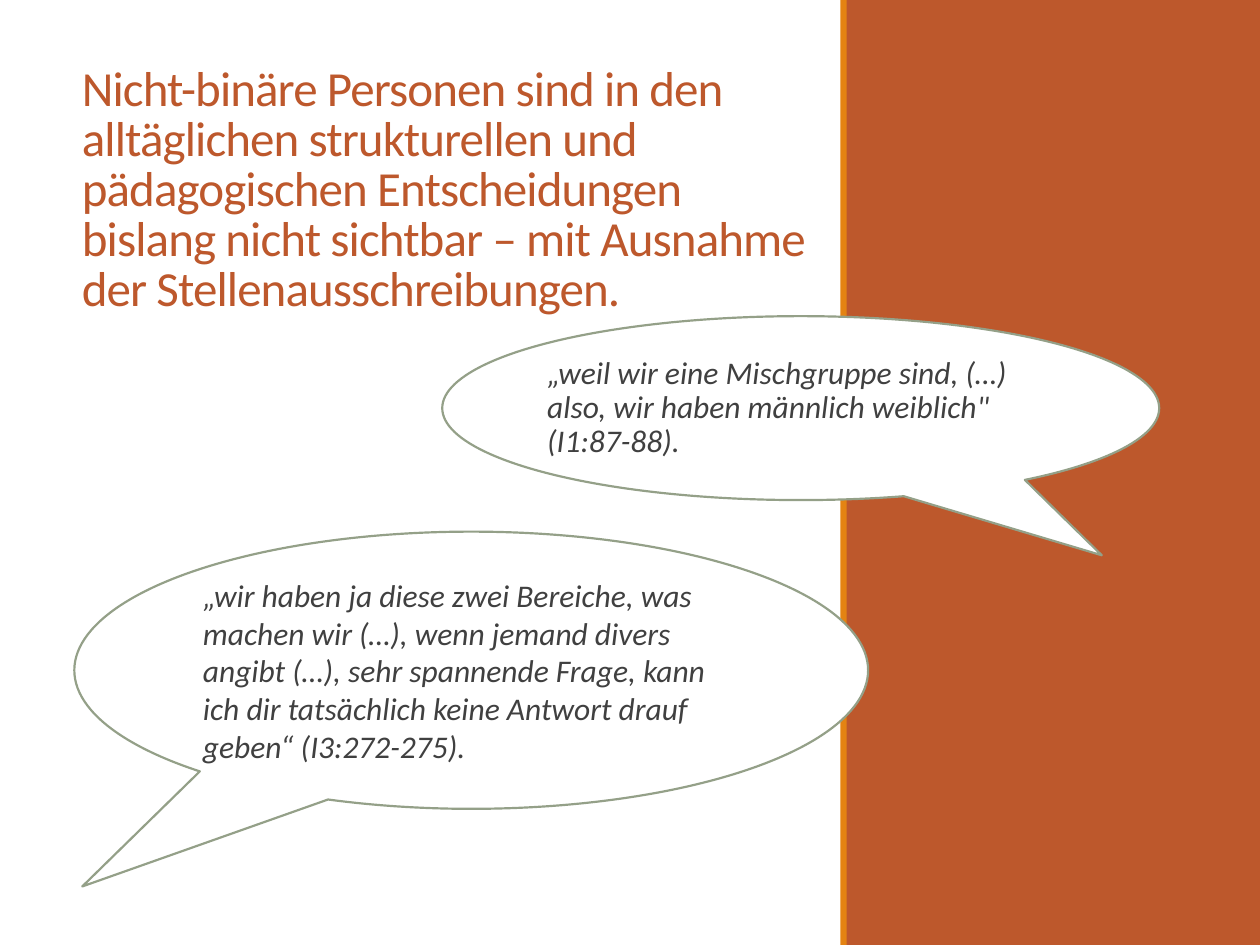
from pptx import Presentation, util as u
from pptx.dml.color import RGBColor
from pptx.enum import shapes, text

COLORS = {
    "rust": "BD582C",
    "orange": "E48312",
    "sage": "94A088",
    "ink": "404040",
    "white": "FFFFFF",
}
COLUMNS, ROWS = 100, 75


def write(frame, words, *, size, color, font="Calibri", italic=False, tracking=0,
          line_spacing=1.0, space_after=0, anchor=text.MSO_ANCHOR.MIDDLE):
    """Fill a text frame with one left-aligned paragraph; tracking is in points."""
    frame.word_wrap = True
    frame.auto_size = text.MSO_AUTO_SIZE.NONE
    frame.vertical_anchor = anchor
    para = frame.paragraphs[0]
    para.alignment = text.PP_ALIGN.LEFT
    para.line_spacing = line_spacing
    para.space_before = u.Pt(0)
    para.space_after = u.Pt(space_after)
    span = para.add_run()
    span.text = words
    span.font.name = font
    span.font.size = u.Pt(size)
    span.font.italic = italic
    span.font.color.rgb = RGBColor.from_string(COLORS[color])
    if tracking:
        span._r.get_or_add_rPr().set("spc", str(round(tracking * 100)))


class SlideBuilder:
    """Places styled elements on a page, measured in grid columns and rows."""

    def __init__(self, deck):
        self.column = deck.slide_width / COLUMNS
        self.row = deck.slide_height / ROWS
        self.page = deck.slides.add_slide(deck.slide_layouts.get_by_name("Title Only"))

    def cells(self, left, top, width, height):
        return (round(left * self.column), round(top * self.row),
                round(width * self.column), round(height * self.row))

    def title(self, words, area):
        box = self.page.shapes.title
        box.left, box.top, box.width, box.height = self.cells(*area)
        write(box.text_frame, words, size=28, color="rust", tracking=-0.5,
              line_spacing=0.85, anchor=text.MSO_ANCHOR.BOTTOM)

    def shape(self, kind, area, fill, line=None):
        box = self.page.shapes.add_shape(kind, *self.cells(*area))
        box.shadow.inherit = False
        box.fill.solid()
        box.fill.fore_color.rgb = RGBColor.from_string(COLORS[fill])
        if line:
            box.line.color.rgb = RGBColor.from_string(COLORS[line])
            box.line.width = u.Pt(1.25)
        else:
            box.line.fill.background()
        return box

    def band(self, left, width, fill):
        self.shape(shapes.MSO_SHAPE.RECTANGLE, (left, 0, width, ROWS), fill)

    def quote(self, words, area, tail, line_spacing=1.0, side_inset=0.1):
        """Add a speech bubble; tail is its tip as shares of the size from the centre."""
        box = self.shape(shapes.MSO_SHAPE.OVAL_CALLOUT, area, "white", "sage")
        box.adjustments[0], box.adjustments[1] = tail
        frame = box.text_frame
        frame.margin_left = frame.margin_right = u.Inches(side_inset)
        write(frame, words, size=18, color="ink", italic=True,
              line_spacing=line_spacing, space_after=6)


def main():
    deck = Presentation()
    deck.slide_width, deck.slide_height = u.Inches(10), u.Inches(7.5)
    slide = SlideBuilder(deck)

    slide.title("Nicht-binäre Personen sind in den alltäglichen strukturellen und "
                "pädagogischen Entscheidungen bislang nicht sichtbar – mit Ausnahme "
                "der Stellenausschreibungen.", (5.5, 3.6, 60.7, 22))
    slide.band(66.8, 33.2, "rust")
    slide.band(66.7, 0.5, "orange")
    slide.quote("„weil wir eine Mischgruppe sind, (…) also, wir haben männlich "
                "weiblich\" (I1:87-88).",
                (35.1, 25.1, 56.9, 14.6), tail=(0.42, 0.8),
                line_spacing=0.9, side_inset=0)
    slide.quote("„wir haben ja diese zwei Bereiche, was machen wir (…), wenn jemand "
                "divers angibt (…), sehr spannende Frage, kann ich dir tatsächlich "
                "keine Antwort drauf geben“ (I3:272-275).",
                (5.9, 42.2, 63, 22), tail=(-0.49, 0.78))

    deck.save("out.pptx")


if __name__ == "__main__":
    main()
